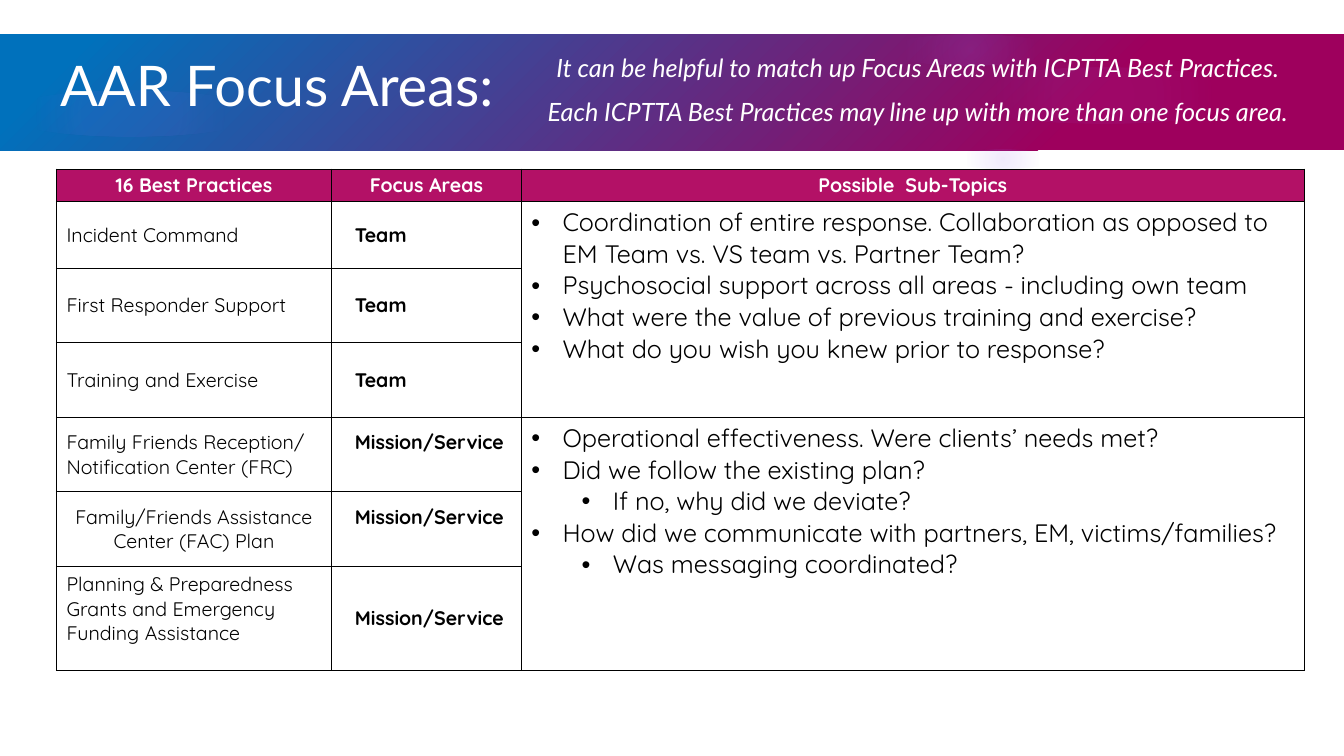
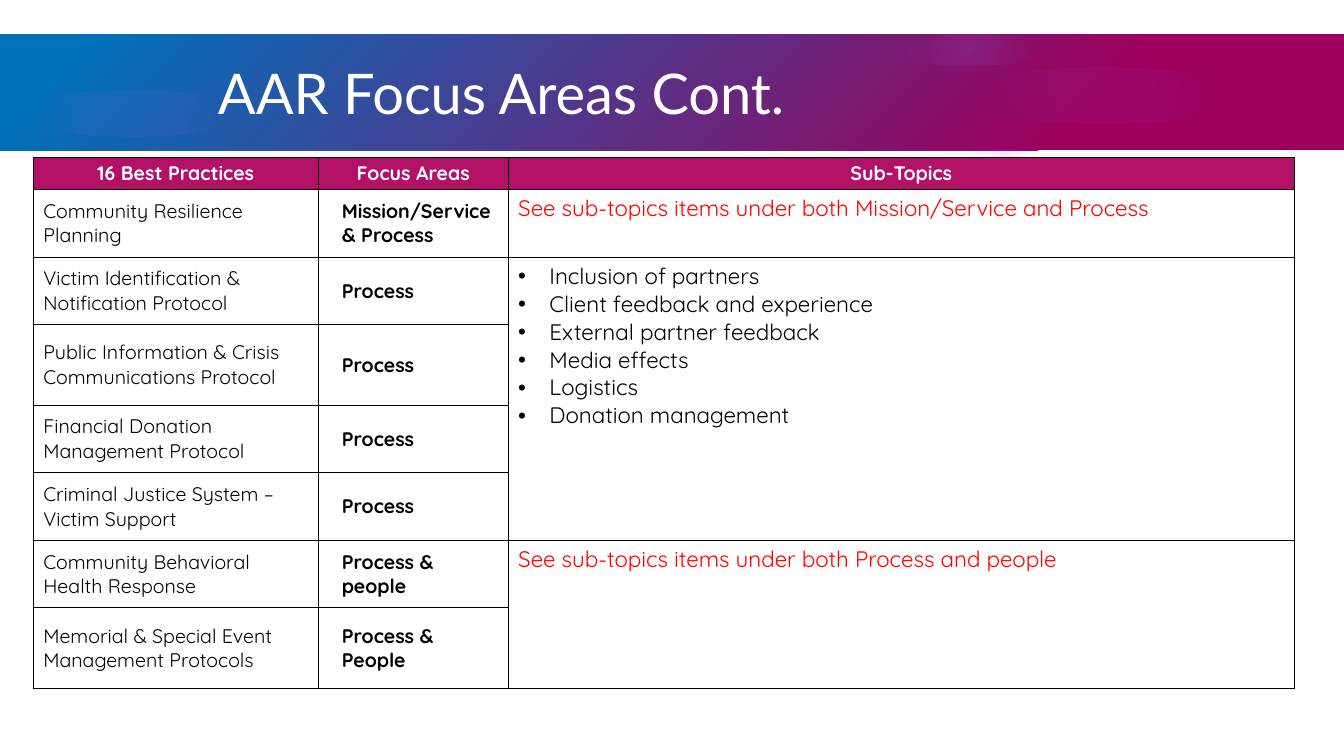
from pptx import Presentation
from pptx.dml.color import RGBColor
from pptx.enum.shapes import MSO_SHAPE as SHAPE
from pptx.enum.text import MSO_ANCHOR as ANCHOR, MSO_AUTO_SIZE as AUTOSIZE, PP_ALIGN as ALIGN
from pptx.oxml import parse_xml
from pptx.oxml.ns import nsdecls, qn
from pptx.util import Inches, Pt

COLORS = {
    "white": "FFFFFF",
    "black": "000000",
    "red": "FF0000",
    "header": "B31166",
    "magenta": "9E005D",
    "blue": "0071BC",
    "glow": "9B6BF2",
}
TITLE_FONT = "Lato"
TABLE_FONT = "Quicksand"
HEADER_HEIGHT = 0.32
CELL_INSET = 0.05
BULLET_INDENT = 0.31
LEVEL_STEP = 0.5

GLOWS = [
    (0, 0.9, 2.58, 0.46, [(0, 8), (36, 8), (72, 0)]),
    (9.41, 1.48, 1.08, 0.19, [(0, 14), (36, 7), (66, 0)]),
    (9.41, 0.67, 3.08, 0.55, [(0, 7), (36, 6), (69, 0)]),
    (8.75, 0.34, 1.75, 0.31, [(0, 14), (36, 7), (73, 0)]),
]

PAGES = [
    {
        "title": "AAR Focus Areas:",
        "title_box": (-0.17, 0.45, 5.83, 0.77),
        "remarks": [
            "It can be helpful to match up Focus Areas with ICPTTA Best Practices.",
            "Each ICPTTA Best Practices may line up with more than one focus area.",
        ],
        "corner": (0.56, 1.68),
        "columns": [2.73, 1.88, 7.77],
        "headings": ["16 Best Practices", "Focus Areas", "Possible  Sub-Topics"],
        "practices": [
            ("Incident Command", "Team", 0.66),
            ("First Responder Support", "Team", 0.74),
            ("Training and Exercise", "Team", 0.74),
            ("Family Friends Reception/ Notification Center (FRC)", "Mission/Service", 0.74),
            ("Family/Friends Assistance Center (FAC) Plan", "Mission/Service", 0.74),
            ("Planning & Preparedness Grants and Emergency Funding Assistance", "Mission/Service", 1.03),
        ],
        "centered": [(5, 0)],
        "bottom_insets": {(4, 1): 0.29, (5, 1): 0.29, (6, 0): 0.24},
        "topic_size": 18,
        "topics": [
            (3, "black", [
                (0, "Coordination of entire response. Collaboration as opposed to EM Team vs. VS team vs. Partner Team?"),
                (0, "Psychosocial support across all areas - including own team"),
                (0, "What were the value of previous training and exercise?"),
                (0, "What do you wish you knew prior to response?"),
            ]),
            (3, "black", [
                (0, "Operational effectiveness. Were clients’ needs met?"),
                (0, "Did we follow the existing plan?"),
                (1, "If no, why did we deviate?"),
                (0, "How did we communicate with partners, EM, victims/families?"),
                (1, "Was messaging coordinated?"),
            ]),
        ],
    },
    {
        "title": "AAR Focus Areas Cont.",
        "title_box": (0.33, 0.53, 9.28, 0.77),
        "remarks": [],
        "corner": (0.33, 1.56),
        "columns": [2.83, 1.88, 7.8],
        "headings": ["16 Best Practices", "Focus Areas", "Sub-Topics"],
        "practices": [
            ("Community Resilience Planning", "Mission/Service & Process", 0.67),
            ("Victim Identification & Notification Protocol", "Process", 0.67),
            ("Public Information & Crisis Communications Protocol", "Process", 0.8),
            ("Financial Donation Management Protocol", "Process", 0.67),
            ("Criminal Justice System – Victim Support", "Process", 0.67),
            ("Community Behavioral Health Response", "Process & people", 0.67),
            ("Memorial & Special Event Management Protocols", "Process & People", 0.8),
        ],
        "centered": [],
        "bottom_insets": {},
        "topic_size": 16,
        "topics": [
            (1, "red", [(None, "See sub-topics items under both Mission/Service and Process")]),
            (4, "black", [
                (0, "Inclusion of partners"),
                (0, "Client feedback and experience"),
                (0, "External partner feedback"),
                (0, "Media effects"),
                (0, "Logistics"),
                (0, "Donation management"),
            ]),
            (2, "red", [(None, "See sub-topics items under both Process and people")]),
        ],
    },
]


def paint_gradient(shape, stops, direction):
    shape.shadow.inherit = False
    shape.line.fill.background()
    shape.fill.background()
    marks = "".join(
        f'<a:gs pos="{position * 1000}"><a:srgbClr val="{COLORS[color]}">'
        f'<a:alpha val="{opacity * 1000}"/></a:srgbClr></a:gs>'
        for position, color, opacity in stops
    )
    gradient = parse_xml(
        f'<a:gradFill {nsdecls("a")}><a:gsLst>{marks}</a:gsLst>{direction}</a:gradFill>'
    )
    properties = shape.element.spPr
    properties.replace(properties.find(qn("a:noFill")), gradient)


def write(paragraph, text, font, size, color, bold=False, italic=False, align=ALIGN.LEFT):
    paragraph.text = text
    paragraph.alignment = align
    for run in paragraph.runs:
        run.font.name = font
        run.font.size = Pt(size)
        run.font.bold = bold
        run.font.italic = italic
        run.font.color.rgb = RGBColor.from_string(COLORS[color])


prs = Presentation()
prs.slide_width = Inches(13.33)
prs.slide_height = Inches(7.5)
layout = prs.slide_layouts[5]
for placeholder in list(layout.placeholders):
    if placeholder.placeholder_format.idx != 0:
        placeholder.element.getparent().remove(placeholder.element)

slides = [prs.slides.add_slide(layout) for page in PAGES]

canvas = slides[0].shapes
band = canvas.add_shape(SHAPE.RECTANGLE, 0, Inches(0.34), prs.slide_width, Inches(1.15))
paint_gradient(
    band,
    [(20, "magenta", 100), (94, "blue", 100)],
    '<a:lin ang="13500000" scaled="0"/>',
)
banner = [band]
for left, top, width, height, fades in GLOWS:
    glow = canvas.add_shape(SHAPE.OVAL, Inches(left), Inches(top), Inches(width), Inches(height))
    paint_gradient(
        glow,
        [(position, "glow", opacity) for position, opacity in fades],
        '<a:path path="circle"><a:fillToRect l="50000" t="50000" r="50000" b="50000"/></a:path>',
    )
    banner.append(glow)
for depth, part in enumerate(banner, start=2):
    layout.element.cSld.spTree.insert(depth, part.element)

for slide, page in zip(slides, PAGES):
    title = slide.shapes.title
    title.left, title.top, title.width, title.height = map(Inches, page["title_box"])
    title.text_frame.auto_size = AUTOSIZE.NONE
    title.text_frame.vertical_anchor = ANCHOR.MIDDLE
    write(title.text_frame.paragraphs[0], page["title"], TITLE_FONT, 40, "white", align=ALIGN.CENTER)

    if page["remarks"]:
        remarks = slide.shapes.add_textbox(Inches(4.87), Inches(0.47), Inches(8.47), Inches(0.85)).text_frame
        remarks.word_wrap = True
        for index, remark in enumerate(page["remarks"]):
            paragraph = remarks.add_paragraph() if index else remarks.paragraphs[0]
            write(paragraph, remark, TITLE_FONT, 18, "white", italic=True, align=ALIGN.CENTER)
            if index:
                paragraph.space_before = Pt(10)

    heights = [HEADER_HEIGHT] + [height for _, _, height in page["practices"]]
    left, top = page["corner"]
    focus = slide.shapes.add_table(
        len(heights), len(page["columns"]),
        Inches(left), Inches(top), Inches(sum(page["columns"])), Inches(sum(heights)),
    ).table
    focus.horz_banding = False
    for column, width in zip(focus.columns, page["columns"]):
        column.width = Inches(width)
    for row, height in zip(focus.rows, heights):
        row.height = Inches(height)

    for r in range(len(heights)):
        for c in range(len(page["columns"])):
            cell = focus.cell(r, c)
            cell.vertical_anchor = ANCHOR.TOP if r and c == 2 else ANCHOR.MIDDLE
            for side in ("lnL", "lnR", "lnT", "lnB"):
                outer = (side == "lnL" and c == 0) or (side == "lnT" and r == 0)
                cell._tc.get_or_add_tcPr().append(parse_xml(
                    f'<a:{side} {nsdecls("a")} w="{Pt(1 if outer else 0.75)}"><a:solidFill>'
                    f'<a:srgbClr val="{COLORS["black"]}"/></a:solidFill></a:{side}>'
                ))
            cell.fill.solid()
            cell.fill.fore_color.rgb = RGBColor.from_string(COLORS["white" if r else "header"])
            if r == 0:
                cell.margin_left = cell.margin_right = cell.margin_top = cell.margin_bottom = 0
                write(cell.text_frame.paragraphs[0], page["headings"][c], TABLE_FONT, 14, "white",
                      bold=True, align=ALIGN.CENTER)
            elif c < 2:
                cell.margin_bottom = Inches(page["bottom_insets"].get((r, c), CELL_INSET))
                paragraph = cell.text_frame.paragraphs[0]
                write(paragraph, page["practices"][r - 1][c], TABLE_FONT, 14, "black", bold=c == 1,
                      align=ALIGN.CENTER if (r, c) in page["centered"] else ALIGN.LEFT)
                if c == 1:
                    paragraph._p.get_or_add_pPr().set("marL", str(Inches(0.13)))

    first = 1
    for span, color, lines in page["topics"]:
        cell = focus.cell(first, 2)
        if span > 1:
            cell.merge(focus.cell(first + span - 1, 2))
        for index, (level, line) in enumerate(lines):
            paragraph = cell.text_frame.add_paragraph() if index else cell.text_frame.paragraphs[0]
            if level is not None:
                paragraph.level = level
                properties = paragraph._p.get_or_add_pPr()
                properties.set("marL", str(Inches(BULLET_INDENT + level * LEVEL_STEP)))
                properties.set("indent", str(-Inches(BULLET_INDENT)))
                properties.append(parse_xml(f'<a:buFont {nsdecls("a")} typeface="Arial"/>'))
                properties.append(parse_xml(f'<a:buChar {nsdecls("a")} char="•"/>'))
            write(paragraph, line, TABLE_FONT, page["topic_size"], color)
        first += span

prs.save("out.pptx")
